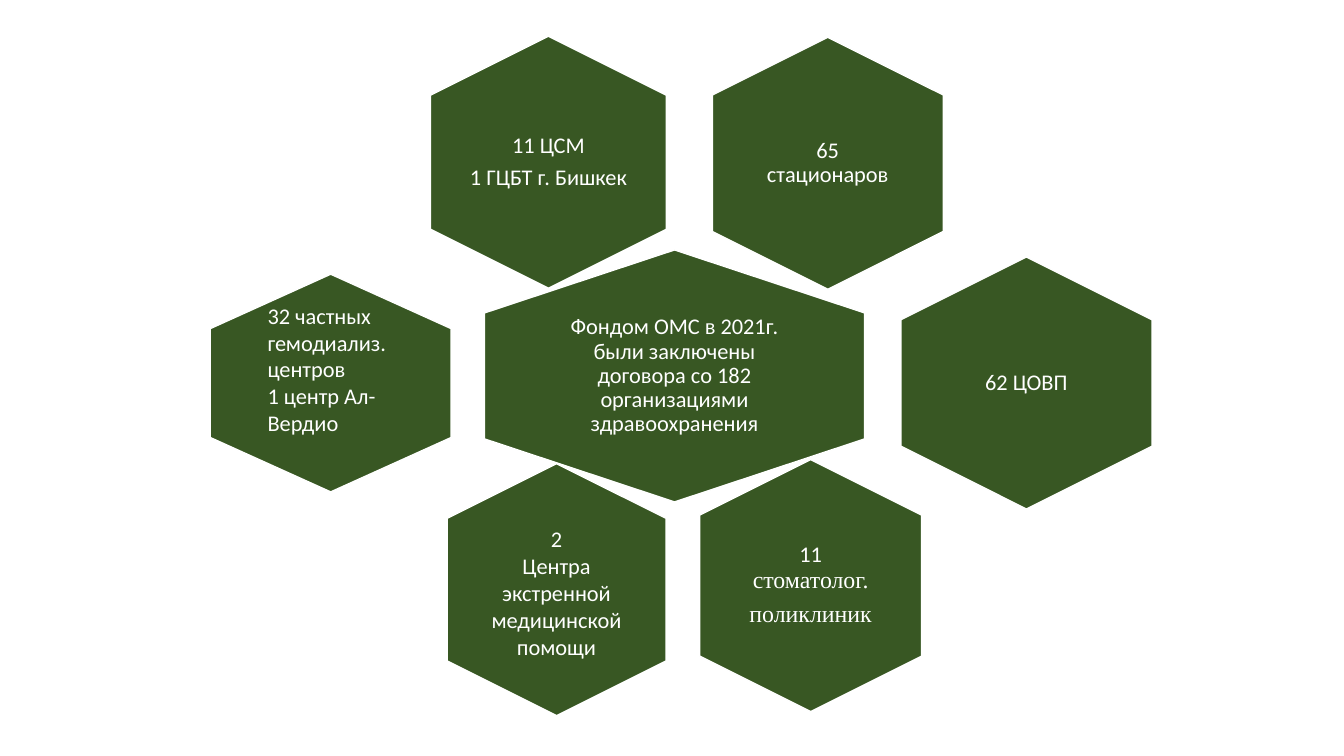
from dataclasses import dataclass
from pptx import Presentation
from pptx.dml.color import RGBColor
from pptx.enum.shapes import MSO_SHAPE
from pptx.enum.text import MSO_ANCHOR, MSO_AUTO_SIZE, PP_ALIGN
from pptx.util import Inches, Pt


@dataclass(frozen=True)
class Theme:
    """Colours, fonts and type sizes of the slide."""
    green: RGBColor = RGBColor(0x38, 0x57, 0x23)
    white: RGBColor = RGBColor(0xFF, 0xFF, 0xFF)
    sans: str = "Calibri"
    serif: str = "Times New Roman"
    size: int = 16
    large: int = 17


THEME = Theme()
SERIF = {"font": THEME.serif, "size": THEME.large}


def write(shape, paras, inset=0.0, align=PP_ALIGN.CENTER, line=0.9, after=6):
    """Fill a shape with paragraphs, each a list of (text, format) runs."""
    frame = shape.text_frame
    frame.word_wrap = True
    frame.auto_size = MSO_AUTO_SIZE.NONE
    frame.vertical_anchor = MSO_ANCHOR.MIDDLE
    frame.margin_left = frame.margin_right = Inches(inset)
    frame.margin_top = frame.margin_bottom = Inches(inset)
    for i, runs in enumerate(paras):
        para = frame.add_paragraph() if i else frame.paragraphs[0]
        para.alignment = align
        para.line_spacing = line
        para.space_after = Pt(after)
        for text, form in runs:
            run = para.add_run()
            run.text = text
            run.font.name = form.get("font", THEME.sans)
            run.font.size = Pt(form.get("size", THEME.size))
            run.font.color.rgb = THEME.white


def place(shape, mid, size):
    """Centre a shape of the given size on a point."""
    shape.width, shape.height = (Inches(n) for n in size)
    shape.left, shape.top = (Inches(m - n / 2) for m, n in zip(mid, size))


def hexagon(slide, mid, wide, high=2.5, turn=90):
    """Draw a hexagon with its points up and down in a box centred on mid."""
    shape = slide.shapes.add_shape(MSO_SHAPE.HEXAGON, 0, 0, 0, 0)
    place(shape, mid, (high, wide))
    shape.rotation = turn
    shape.shadow.inherit = False
    shape.fill.solid()
    shape.fill.fore_color.rgb = THEME.green
    shape.line.color.rgb = THEME.white
    shape.line.width = Pt(1)


def cell(slide, mid, wide, label, paras, drop=0, high=2.5, turn=90, **form):
    """Draw a hexagon and its label, lowered by drop from the centre."""
    hexagon(slide, mid, wide, high, turn)
    box = slide.shapes.add_textbox(0, 0, 0, 0)
    place(box, (mid[0], mid[1] + drop), label)
    write(box, paras, **form)


def core(slide, mid, wide):
    """Draw the central hexagon with the slide title on it."""
    hexagon(slide, mid, wide)
    title = slide.shapes.title
    tree = title.element.getparent()
    tree.append(title.element)
    place(title, mid, (2.52, 1.66))
    write(title, [[("Фондом ОМС в 2021г. были заключены договора со 182 "
                    "организациями здравоохранения", {})]], inset=0.07)


def cluster(slide):
    """Place the central hexagon and the six around it."""
    cell(slide, (8.21, 1.62), 2.29, (1.56, 1.7),
         [[("65 стационаров", {})]], inset=0.07)
    cell(slide, (5.44, 1.61), 2.34, (1.58, 1.69),
         [[("11 ЦСМ", {})], [("1 ГЦБТ г. Бишкек", {})]])
    core(slide, (6.69, 3.73), 3.77)
    cell(slide, (10.18, 3.8), 2.49, (1.66, 1.66), [[("62 ЦОВП", {})]])
    cell(slide, (8.04, 5.81), 2.2, (1.51, 1.71),
         [[("11 ", {}), ("стоматолог.", SERIF)], [("поликлиник", SERIF)]],
         inset=0.07)
    cell(slide, (5.52, 5.85), 2.17, (1.49, 1.72),
         [[("2", {})], [("Центра экстренной медицинской помощи", {})]],
         drop=0.03, line=1, after=0)
    cell(slide, (3.28, 3.8), 2.39, (1.45, 1.45),
         [[("32 частных гемодиализ.центров", {})], [("1 центр Ал-Вердио", {})]],
         drop=-0.14, high=2.16, turn=270, inset=0.1,
         align=PP_ALIGN.LEFT, line=1, after=0)


def main():
    """Build and save the deck."""
    deck = Presentation()
    deck.slide_width, deck.slide_height = Inches(13.33), Inches(7.5)
    cluster(deck.slides.add_slide(deck.slide_layouts[5]))
    deck.save("out.pptx")


if __name__ == "__main__":
    main()
